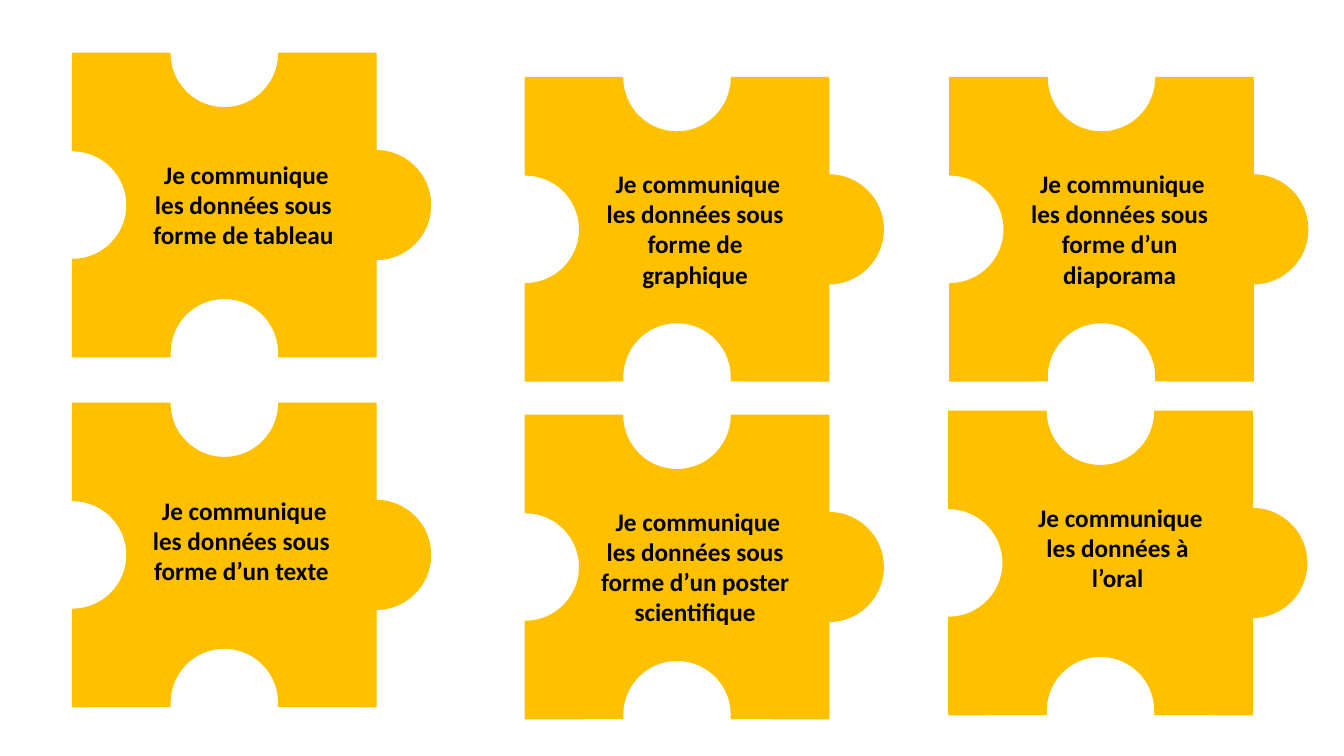
import math

import lxml.etree
import pptx
import pptx.dml.color
import pptx.enum.text
import pptx.oxml.ns
import pptx.util

Inches = pptx.util.Inches
qn = pptx.oxml.ns.qn

# Puzzle geometry in inches
SIDE = 3.01
MIDDLE = SIDE / 2
RADIUS = 0.54
LOWER_NOTCH = 2.97


def color(hex_text):
    return pptx.dml.color.RGBColor.from_string(hex_text)


def corner(x, y):
    """A point reached by a straight line, so without control points."""
    return x, y, []


def arc(center_x, center_y, start, end):
    """Half circle as two Bezier curves; degrees run clockwise from the right."""
    step = math.radians(end - start) / 2
    reach = RADIUS * 4 / 3 * math.tan(step / 4)
    points = []
    for i in range(3):
        angle = math.radians(start) + i * step
        cos, sin = math.cos(angle), math.sin(angle)
        x, y = center_x + RADIUS * cos, center_y + RADIUS * sin
        controls = [(leaving_x, leaving_y), (x + reach * sin, y - reach * cos)] if i else []
        points.append((x, y, controls))
        leaving_x, leaving_y = x - reach * sin, y + reach * cos
    return points


# Outlines relative to the upper left corner of a piece
SOCKET = arc(SIDE, MIDDLE, 270, 90)
BODY = [corner(0, 0), *arc(MIDDLE, 0, 180, 0),
        corner(SIDE, 0), *SOCKET,
        corner(SIDE, SIDE), *arc(MIDDLE, LOWER_NOTCH, 4, -184),
        corner(0, SIDE), *arc(0, MIDDLE, 90, -90)]
KNOB = arc(SIDE, MIDDLE, -90, 90)


class PuzzleSlide:
    font = "Calibri"
    size = 18
    fill = "FFC000"
    ink = "000000"

    def __init__(self, deck):
        self.page = deck.slides.add_slide(deck.slide_layouts[6])

    def bend(self, shape, points):
        """Turn the straight segments that have control points into curves."""
        segments = list(shape.element.iter(qn("a:lnTo")))
        for segment, (x, y, controls) in zip(segments, points[1:]):
            if not controls:
                continue
            target = segment[0]
            end_x, end_y = int(target.get("x")), int(target.get("y"))
            segment.tag = qn("a:cubicBezTo")
            for control_x, control_y in controls:
                point = lxml.etree.Element(qn("a:pt"))
                point.set("x", str(end_x + Inches(control_x - x)))
                point.set("y", str(end_y + Inches(control_y - y)))
                target.addprevious(point)

    def outline(self, group, points, left, top):
        placed = [(Inches(left + x), Inches(top + y)) for x, y, _ in points]
        builder = group.shapes.build_freeform(*placed[0], scale=1.0)
        builder.add_line_segments(placed[1:], close=True)
        shape = builder.convert_to_shape()
        self.bend(shape, points)
        shape.shadow.inherit = False
        shape.fill.solid()
        shape.fill.fore_color.rgb = color(self.fill)
        shape.line.color.rgb = color(self.fill)
        shape.line.width = pptx.util.Pt(1)

    def piece(self, left, top):
        group = self.page.shapes.add_group_shape()
        for points in (SOCKET, BODY, KNOB):
            self.outline(group, points, left, top)

    def label(self, text, left, top, height):
        box = self.page.shapes.add_textbox(
            Inches(left), Inches(top), Inches(2.13), Inches(height))
        frame = box.text_frame
        frame.word_wrap = True
        frame.auto_size = pptx.enum.text.MSO_AUTO_SIZE.SHAPE_TO_FIT_TEXT
        para = frame.paragraphs[0]
        para.text = text
        para.alignment = pptx.enum.text.PP_ALIGN.CENTER
        para.font.name = self.font
        para.font.size = pptx.util.Pt(self.size)
        para.font.bold = True
        para.font.color.rgb = color(self.ink)


# Piece left and top, label left, top and height, ending of the sentence
PIECES = [
    (0.72, 0.53, 1.35, 1.53, 1.01, "sous forme de tableau"),
    (5.21, 0.77, 5.83, 1.62, 1.31, "sous forme de graphique"),
    (9.42, 0.77, 10.04, 1.62, 1.31, "sous forme d’un diaporama"),
    (0.72, 4.00, 1.33, 4.86, 1.01, "sous forme d’un texte"),
    (5.21, 4.12, 5.83, 4.97, 1.31, "sous forme d’un poster scientifique"),
    (9.41, 4.08, 10.02, 4.93, 1.01, "à l’oral"),
]


def main():
    deck = pptx.Presentation()
    deck.slide_width = Inches(13.33)
    deck.slide_height = Inches(7.5)
    slide = PuzzleSlide(deck)
    for left, top, label_left, label_top, height, ending in PIECES:
        slide.piece(left, top)
        slide.label(f" Je communique les données {ending}", label_left, label_top, height)
    deck.save("out.pptx")


if __name__ == "__main__":
    main()
